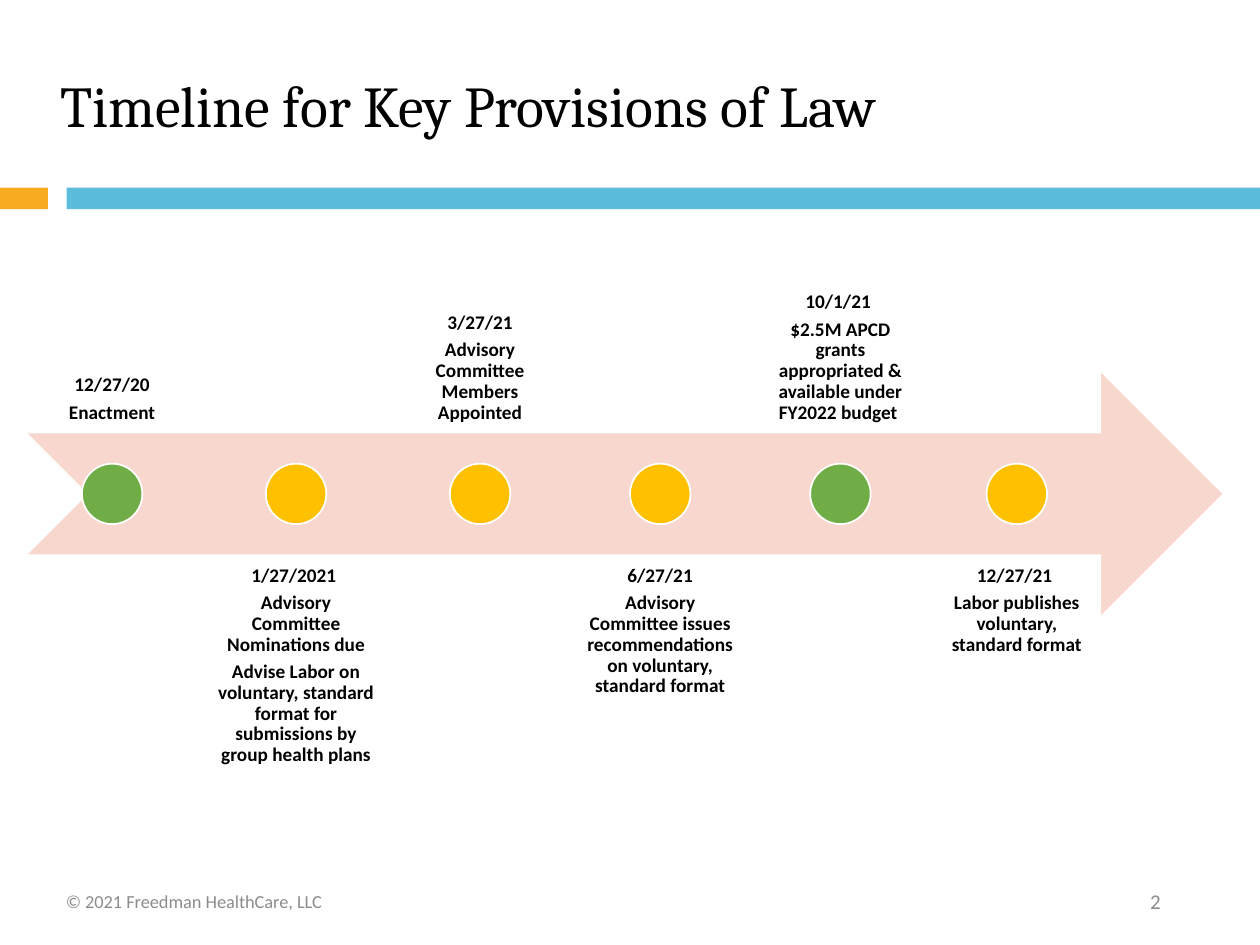
from dataclasses import dataclass

from pptx import Presentation
from pptx.dml.color import RGBColor
from pptx.enum.shapes import MSO_SHAPE
from pptx.enum.text import MSO_ANCHOR, PP_ALIGN
from pptx.util import Inches, Pt

RECTANGLE = MSO_SHAPE.RECTANGLE
ARROW = MSO_SHAPE.NOTCHED_RIGHT_ARROW
CIRCLE = MSO_SHAPE.OVAL
TOP, MIDDLE, BOTTOM = MSO_ANCHOR.TOP, MSO_ANCHOR.MIDDLE, MSO_ANCHOR.BOTTOM
LEFT, CENTER, RIGHT = PP_ALIGN.LEFT, PP_ALIGN.CENTER, PP_ALIGN.RIGHT


@dataclass(frozen=True)
class Theme:
    heading_font: str = "Cambria"
    body_font: str = "Calibri"
    text: str = "000000"
    muted: str = "8C8C8C"
    white: str = "FFFFFF"
    orange: str = "F7AB21"
    blue: str = "5BBDDB"
    arrow: str = "F8D7CE"
    green: str = "70AD47"
    yellow: str = "FFC000"
    title_size: float = 33
    event_size: float = 11
    footer_size: float = 10.5
    number_size: float = 12


class TimelineSlide:
    """Draws styled elements on one slide."""

    def __init__(self, slide, theme):
        self.slide = slide
        self.theme = theme

    def shape(self, kind, left, top, width, height, fill, outline=None):
        shape = self.slide.shapes.add_shape(
            kind, Inches(left), Inches(top), Inches(width), Inches(height))
        shape.shadow.inherit = False
        shape.fill.solid()
        shape.fill.fore_color.rgb = RGBColor.from_string(fill)
        if outline:
            shape.line.color.rgb = RGBColor.from_string(outline)
            shape.line.width = Pt(1)
        else:
            shape.line.fill.background()

    def text(self, lines, left, top, width, height, size, color, font=None,
             bold=False, align=LEFT, anchor=MIDDLE, spacing=1.0, after=0, inset=None):
        box = self.slide.shapes.add_textbox(
            Inches(left), Inches(top), Inches(width), Inches(height))
        frame = box.text_frame
        frame.word_wrap = True
        frame.vertical_anchor = anchor
        if inset is not None:
            frame.margin_left = frame.margin_right = Inches(inset)
            frame.margin_top = frame.margin_bottom = Inches(inset)
        for index, line in enumerate(lines):
            paragraph = frame.add_paragraph() if index else frame.paragraphs[0]
            paragraph.alignment = align
            paragraph.line_spacing = spacing
            paragraph.space_after = Pt(after)
            run = paragraph.add_run()
            run.text = line
            run.font.name = font or self.theme.body_font
            run.font.size = Pt(size)
            run.font.bold = bold
            run.font.color.rgb = RGBColor.from_string(color)

    def event(self, left, width, lines, marker_color, above):
        self.text(lines, left, 1.53 if above else 4.4, width, 1.92,
                  self.theme.event_size, self.theme.text, bold=True, align=CENTER,
                  anchor=BOTTOM if above else TOP, spacing=0.9, after=3.7, inset=0.09)
        diameter = 0.48
        self.shape(CIRCLE, left + (width - diameter) / 2, 3.68, diameter, diameter,
                   marker_color, self.theme.white)


def main():
    presentation = Presentation()
    presentation.slide_width = Inches(10)
    presentation.slide_height = Inches(7.5)
    theme = Theme()
    page = TimelineSlide(
        presentation.slides.add_slide(presentation.slide_layouts[6]), theme)

    page.shape(RECTANGLE, 0, 1.49, 0.38, 0.17, theme.orange)
    page.shape(RECTANGLE, 0.53, 1.49, 9.47, 0.17, theme.blue)
    page.text(["Timeline for Key Provisions of Law"], 0.38, 0.4, 7.69, 0.93,
              theme.title_size, theme.text, theme.heading_font, spacing=0.9)
    page.text(["© 2021 Freedman HealthCare, LLC"], 0.38, 6.95, 2.32, 0.4,
              theme.footer_size, theme.muted, align=CENTER)
    page.text(["2"], 7.06, 6.95, 2.25, 0.4,
              theme.number_size, theme.muted, align=RIGHT)

    page.shape(ARROW, 0.22, 2.96, 9.48, 1.92, theme.arrow)
    events = [
        (1.34, theme.green, ["12/27/20", "Enactment"]),
        (1.46, theme.yellow, [
            "1/27/2021 ", "Advisory Committee Nominations due",
            "Advise Labor on voluntary, standard format for submissions "
            "by group health plans"]),
        (1.34, theme.yellow, ["3/27/21", "Advisory Committee Members Appointed"]),
        (1.4, theme.yellow, [
            "6/27/21", "Advisory Committee issues recommendations on voluntary, "
            "standard format"]),
        (1.34, theme.green, [
            "10/1/21 ", "$2.5M APCD grants appropriated & available under "
            "FY2022 budget "]),
        (1.34, theme.yellow, [
            "12/27/21 ", "Labor publishes voluntary, standard format"]),
    ]
    left, gap = 0.22, 0.06
    for index, (width, marker_color, lines) in enumerate(events):
        page.event(left, width, lines, marker_color, above=index % 2 == 0)
        left += width + gap

    presentation.save("out.pptx")


if __name__ == "__main__":
    main()
